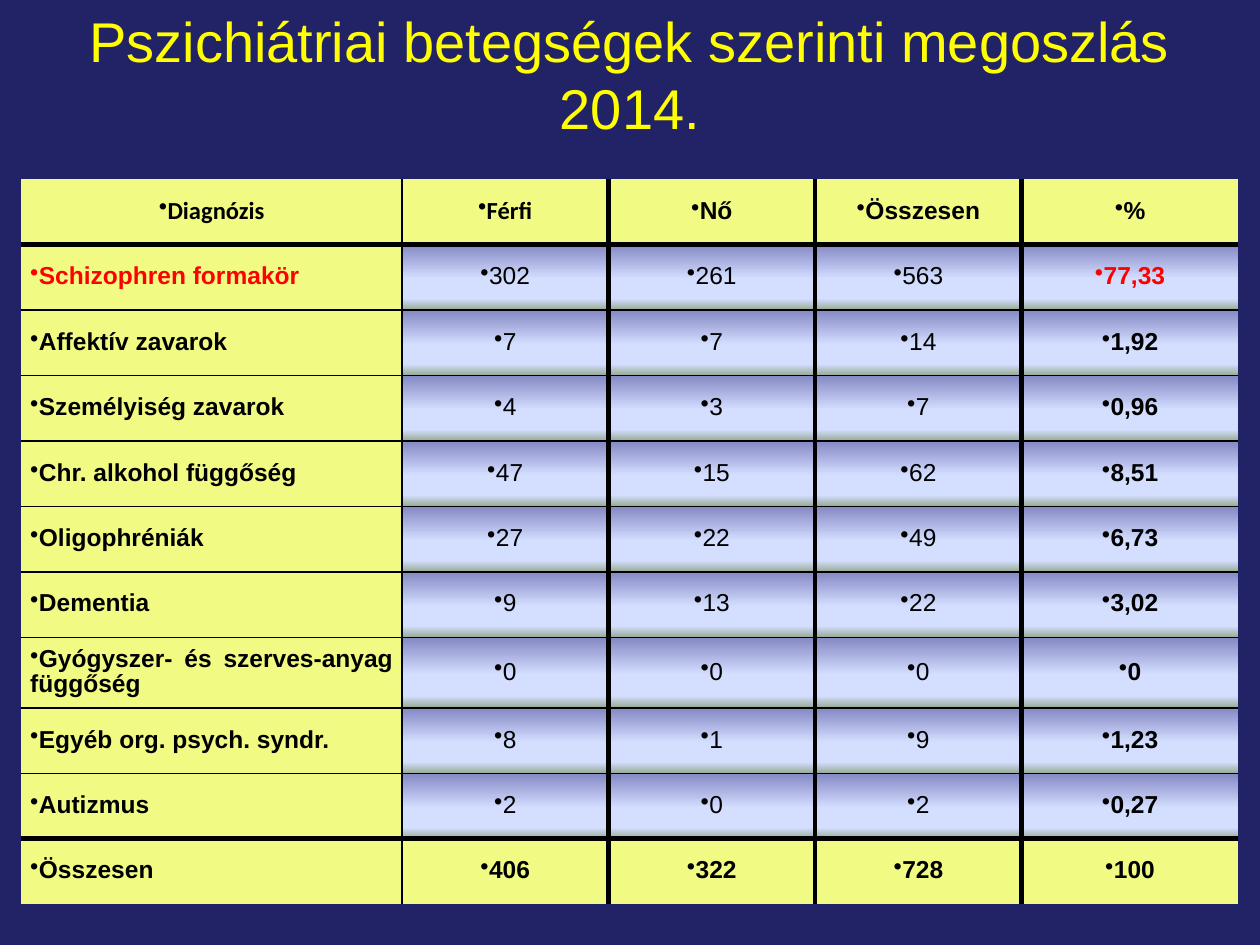
from dataclasses import dataclass

from lxml.etree import SubElement
from pptx import Presentation
from pptx.dml.color import RGBColor
from pptx.enum.text import MSO_ANCHOR, PP_ALIGN
from pptx.oxml.ns import qn
from pptx.util import Inches, Pt


@dataclass(frozen=True)
class Theme:
    """Colours, fonts and type sizes of the slide."""
    background: str = "222267"
    title: str = "FFFF00"
    label_fill: str = "F1FA82"
    ink: str = "000000"
    accent: str = "FF0000"
    shading: tuple = ((0, "8488C4"), (53, "D4DEFF"), (83, "D4DEFF"), (100, "96AB94"))
    font: str = "Arial"
    header_font: str = "Calibri"
    title_size: int = 32
    cell_size: int = 14
    thin: int = 1
    thick: int = 3


@dataclass(frozen=True)
class Diagnosis:
    """One table row: a diagnosis with its patient counts and share."""
    name: str
    men: str
    women: str
    total: str
    percent: str
    label_align: PP_ALIGN = PP_ALIGN.JUSTIFY
    highlight: bool = False
    height: float = 0.52

    def texts(self) -> tuple:
        """Return the cell texts from left to right."""
        return self.name, self.men, self.women, self.total, self.percent


THEME = Theme()
COLUMN_WIDTHS = (3.02, 1.64, 1.64, 1.64, 1.72)
ROWS = (
    Diagnosis("Diagnózis", "Férfi", "Nő", "Összesen", "%", PP_ALIGN.CENTER),
    Diagnosis("Schizophren formakör", "302", "261", "563", "77,33", highlight=True),
    Diagnosis("Affektív zavarok", "7", "7", "14", "1,92"),
    Diagnosis("Személyiség zavarok", "4", "3", "7", "0,96"),
    Diagnosis("Chr. alkohol függőség", "47", "15", "62", "8,51"),
    Diagnosis("Oligophréniák", "27", "22", "49", "6,73"),
    Diagnosis("Dementia", "9", "13", "22", "3,02"),
    Diagnosis("Gyógyszer- és szerves-anyag függőség", "0", "0", "0", "0", height=0.56),
    Diagnosis("Egyéb org. psych. syndr.", "8", "1", "9", "1,23", PP_ALIGN.LEFT),
    Diagnosis("Autizmus", "2", "0", "2", "0,27", PP_ALIGN.LEFT),
    Diagnosis("Összesen", "406", "322", "728", "100"),
)
LAST_ROW, LAST_COLUMN = len(ROWS) - 1, len(COLUMN_WIDTHS) - 1
NO_STYLE_NO_GRID = "{2D5ABB26-0587-4C30-8999-92F81FD0307C}"


def add_color(parent, color: str) -> None:
    """Append an RGB colour to an XML element."""
    SubElement(parent, qn("a:srgbClr"), val=color)


def border_widths(row: int, column: int) -> dict:
    """Return the widths of the inner borders around a cell."""
    widths = {}
    if column > 0:
        widths["a:lnL"] = THEME.thin if column == 1 else THEME.thick
    if column < LAST_COLUMN:
        widths["a:lnR"] = THEME.thin if column == 0 else THEME.thick
    if row > 0:
        widths["a:lnT"] = THEME.thick if row in (1, LAST_ROW) else THEME.thin
    if row < LAST_ROW:
        widths["a:lnB"] = THEME.thick if row in (0, LAST_ROW - 1) else THEME.thin
    return widths


def draw_borders(cell, row: int, column: int) -> None:
    """Draw the inner grid lines that touch a cell."""
    properties = cell._tc.get_or_add_tcPr()
    for side, width in border_widths(row, column).items():
        line = SubElement(properties, qn(side), w=str(Pt(width)))
        add_color(SubElement(line, qn("a:solidFill")), THEME.ink)


def shade(cell) -> None:
    """Fill a cell with the vertical gradient."""
    gradient = SubElement(cell._tc.get_or_add_tcPr(), qn("a:gradFill"), rotWithShape="1")
    stops = SubElement(gradient, qn("a:gsLst"))
    for position, color in THEME.shading:
        add_color(SubElement(stops, qn("a:gs"), pos=str(position * 1000)), color)
    SubElement(gradient, qn("a:lin"), ang=str(90 * 60000), scaled="1")


def set_bullet(paragraph, spaced: bool) -> None:
    """Give a paragraph its spacing and a bullet without indent."""
    paragraph.line_spacing = 0.9
    properties = paragraph._p.get_or_add_pPr()
    properties.set("marL", "0")
    properties.set("indent", "0")
    if spaced:
        paragraph.space_before = Pt(12)
    else:
        before = SubElement(properties, qn("a:spcBef"))
        SubElement(before, qn("a:spcPct"), val="20000")
    SubElement(properties, qn("a:buFontTx"))
    SubElement(properties, qn("a:buChar"), char="•")


def fill_cell(cell, diagnosis: Diagnosis, row: int, column: int) -> None:
    """Write and format one table cell."""
    edge_row = row in (0, LAST_ROW)
    header_pair = row == 0 and column < 2
    draw_borders(cell, row, column)
    if edge_row or column == 0:
        cell.fill.solid()
        cell.fill.fore_color.rgb = RGBColor.from_string(THEME.label_fill)
    else:
        shade(cell)
    cell.vertical_anchor = MSO_ANCHOR.MIDDLE
    cell.margin_left = cell.margin_right = Inches(0.07)
    cell.margin_top = cell.margin_bottom = 0

    paragraph = cell.text_frame.paragraphs[0]
    paragraph.text = diagnosis.texts()[column]
    paragraph.alignment = diagnosis.label_align if column == 0 else PP_ALIGN.CENTER
    set_bullet(paragraph, header_pair)
    outer_column = column in (0, LAST_COLUMN)
    font = paragraph.runs[0].font
    font.name = THEME.header_font if header_pair else THEME.font
    font.size = Pt(THEME.cell_size)
    font.bold = edge_row or outer_column
    highlighted = diagnosis.highlight and outer_column
    font.color.rgb = RGBColor.from_string(THEME.accent if highlighted else THEME.ink)


def add_title(slide, text: str) -> None:
    """Place and format the title."""
    title = slide.shapes.title
    title.left, title.top, title.width, title.height = map(Inches, (0.5, 0, 9, 1.17))
    frame = title.text_frame
    frame.text = text
    frame.vertical_anchor = MSO_ANCHOR.MIDDLE
    paragraph = frame.paragraphs[0]
    paragraph.alignment = PP_ALIGN.CENTER
    font = paragraph.runs[0].font
    font.name, font.size = THEME.font, Pt(THEME.title_size)
    font.color.rgb = RGBColor.from_string(THEME.title)


def add_diagnosis_table(slide) -> None:
    """Build the table of patients by diagnosis."""
    size = sum(COLUMN_WIDTHS), sum(diagnosis.height for diagnosis in ROWS)
    frame = slide.shapes.add_table(
        len(ROWS), len(COLUMN_WIDTHS), *map(Inches, (0.17, 1.42, *size)))
    table = frame.table
    table.first_row = table.horz_banding = False
    table._tbl.tblPr.find(qn("a:tableStyleId")).text = NO_STYLE_NO_GRID
    for column, width in enumerate(COLUMN_WIDTHS):
        table.columns[column].width = Inches(width)
    for row, diagnosis in enumerate(ROWS):
        table.rows[row].height = Inches(diagnosis.height)
        for column in range(len(COLUMN_WIDTHS)):
            fill_cell(table.cell(row, column), diagnosis, row, column)


def main() -> None:
    """Build and save the slide."""
    presentation = Presentation()
    presentation.slide_width, presentation.slide_height = Inches(10), Inches(7.5)
    slide = presentation.slides.add_slide(presentation.slide_layouts[5])
    background = slide.background.fill
    background.solid()
    background.fore_color.rgb = RGBColor.from_string(THEME.background)
    add_title(slide, "Pszichiátriai betegségek szerinti megoszlás 2014.")
    add_diagnosis_table(slide)
    presentation.save("out.pptx")


if __name__ == "__main__":
    main()
